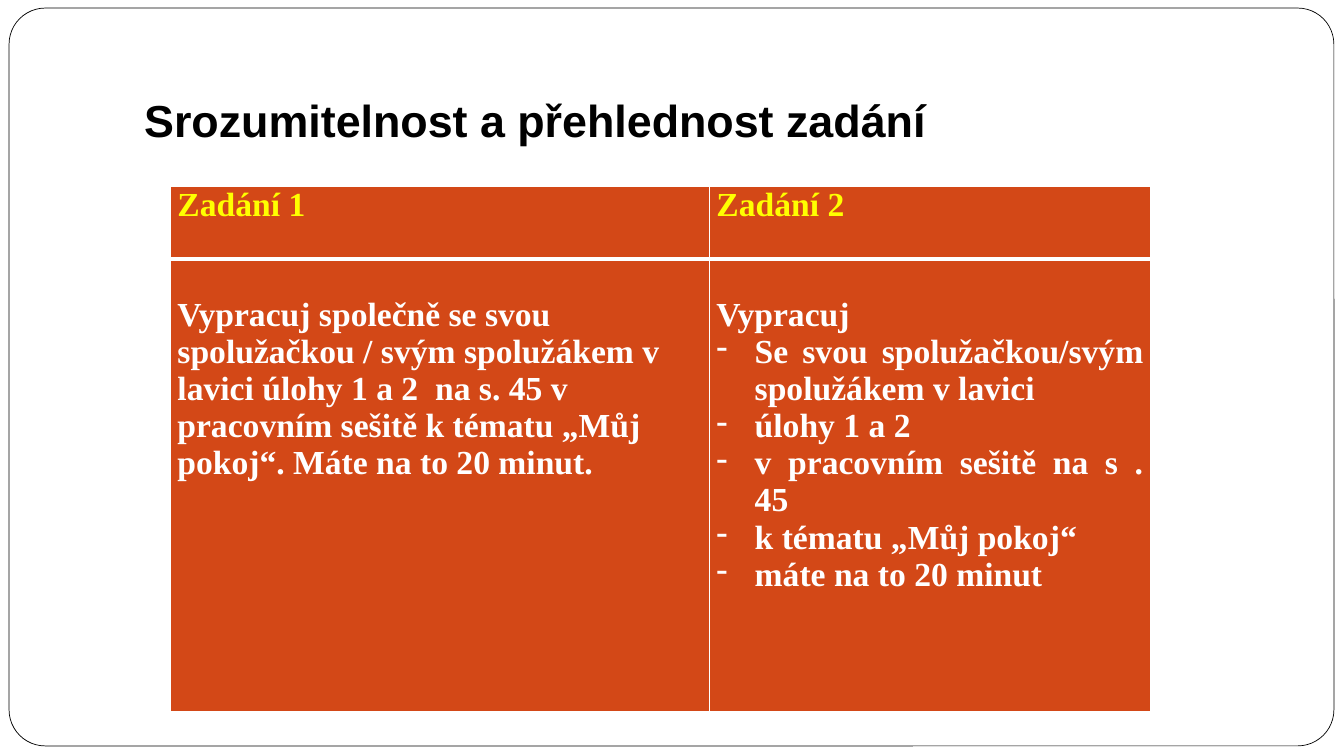
from lxml import etree
from pptx import Presentation
from pptx import util as u
from pptx.dml.color import RGBColor
from pptx.enum import shapes, text
from pptx.oxml import ns

WHITE, BLACK, ORANGE, YELLOW = "FFFFFF", "000000", "D34817", "FFFF00"
HEADINGS = ["Zadání 1", "Zadání 2"]
PROSE_TASK = [
    "Vypracuj společně se svou spolužačkou / svým spolužákem v lavici úlohy 1 a 2  na s. 45 "
    "v pracovním sešitě k tématu „Můj pokoj“. Máte na to 20 minut."
]
LIST_TASK = [
    "Vypracuj",
    "Se svou spolužačkou/svým spolužákem v lavici",
    "úlohy 1 a 2",
    "v pracovním sešitě na s . 45",
    "k tématu „Můj pokoj“",
    "máte na to 20 minut",
]


def color(value):
    return RGBColor.from_string(value)


def inches(box):
    return [u.Inches(length) for length in box]


def style_font(paragraph, name, size, value):
    font = paragraph.font
    font.name, font.size, font.bold = name, u.Pt(size), True
    font.color.rgb = color(value)


def add_frame(slide, box):
    frame = slide.shapes.add_shape(shapes.MSO_SHAPE.ROUNDED_RECTANGLE, *inches(box))
    frame.adjustments[0] = 0.049
    frame.shadow.inherit = False
    frame.fill.solid()
    frame.fill.fore_color.rgb = color(WHITE)
    frame.line.color.rgb = color(BLACK)
    frame.line.width = u.Pt(0.5)
    # Send the frame behind the title
    frame.element.getparent().insert(2, frame.element)


def fill_title(slide, box, wording):
    title = slide.shapes.title
    title.left, title.top, title.width, title.height = inches(box)
    frame = title.text_frame
    frame.text = wording
    frame.auto_size = text.MSO_AUTO_SIZE.NONE
    frame.vertical_anchor = text.MSO_ANCHOR.BOTTOM
    frame.margin_bottom = u.Inches(0.1)
    frame.paragraphs[0].alignment = text.PP_ALIGN.LEFT
    style_font(frame.paragraphs[0], "Arial", 32, BLACK)


def set_borders(cell, widths):
    properties = cell._tc.get_or_add_tcPr()
    for position, (side, width) in enumerate(widths.items()):
        line = etree.Element(ns.qn(f"a:ln{side}"), w=str(u.Pt(width)))
        fill = etree.SubElement(line, ns.qn("a:solidFill"))
        etree.SubElement(fill, ns.qn("a:srgbClr"), val=WHITE)
        properties.insert(position, line)


def add_dash(paragraph):
    properties = paragraph._p.get_or_add_pPr()
    indent = u.Inches(0.38)
    properties.set("marL", str(indent))
    properties.set("indent", str(-indent))
    etree.SubElement(properties, ns.qn("a:buFontTx"))
    etree.SubElement(properties, ns.qn("a:buChar"), char="-")


def fill_cell(cell, lines, value, top_margin, alignment):
    cell.fill.solid()
    cell.fill.fore_color.rgb = color(ORANGE)
    cell.margin_left = cell.margin_right = u.Inches(0.07)
    cell.margin_top, cell.margin_bottom = u.Inches(top_margin), 0
    cell.text_frame.text = "\n".join(lines)
    for index, paragraph in enumerate(cell.text_frame.paragraphs):
        paragraph.alignment = alignment
        style_font(paragraph, "Times New Roman", 24, value)
        if index:
            add_dash(paragraph)


def add_task_table(slide, box):
    width, height = box[2:]
    table = slide.shapes.add_table(2, 2, *inches(box)).table
    table.first_row = table.horz_banding = False
    for column, share in zip(table.columns, (0.55, 0.45)):
        column.width = u.Inches(width * share)
    header_height = 0.72
    for row, row_height in zip(table.rows, (header_height, height - header_height)):
        row.height = u.Inches(row_height)

    left, justified = text.PP_ALIGN.LEFT, text.PP_ALIGN.JUSTIFY
    tasks = zip(HEADINGS, (PROSE_TASK, LIST_TASK), (left, justified))
    for index, (heading, lines, alignment) in enumerate(tasks):
        header, body = table.cell(0, index), table.cell(1, index)
        fill_cell(header, [heading], YELLOW, 0, left)
        fill_cell(body, lines, WHITE, 0.37, alignment)
        # A thick rule parts the header from the body
        set_borders(header, {"L": 1, "R": 1, "T": 1, "B": 3})
        set_borders(body, {"L": 1, "R": 1, "T": 3, "B": 1})


def main():
    presentation = Presentation()
    presentation.slide_width, presentation.slide_height = inches((13.33, 7.5))
    slide = presentation.slides.add_slide(presentation.slide_layouts[5])
    add_frame(slide, (0.09, 0.08, 13.14, 7.32))
    fill_title(slide, (1.33, 0.3, 11.33, 1.25), "Srozumitelnost a přehlednost zadání")
    add_task_table(slide, (1.69, 1.85, 9.72, 5.21))
    presentation.save("out.pptx")


if __name__ == "__main__":
    main()
